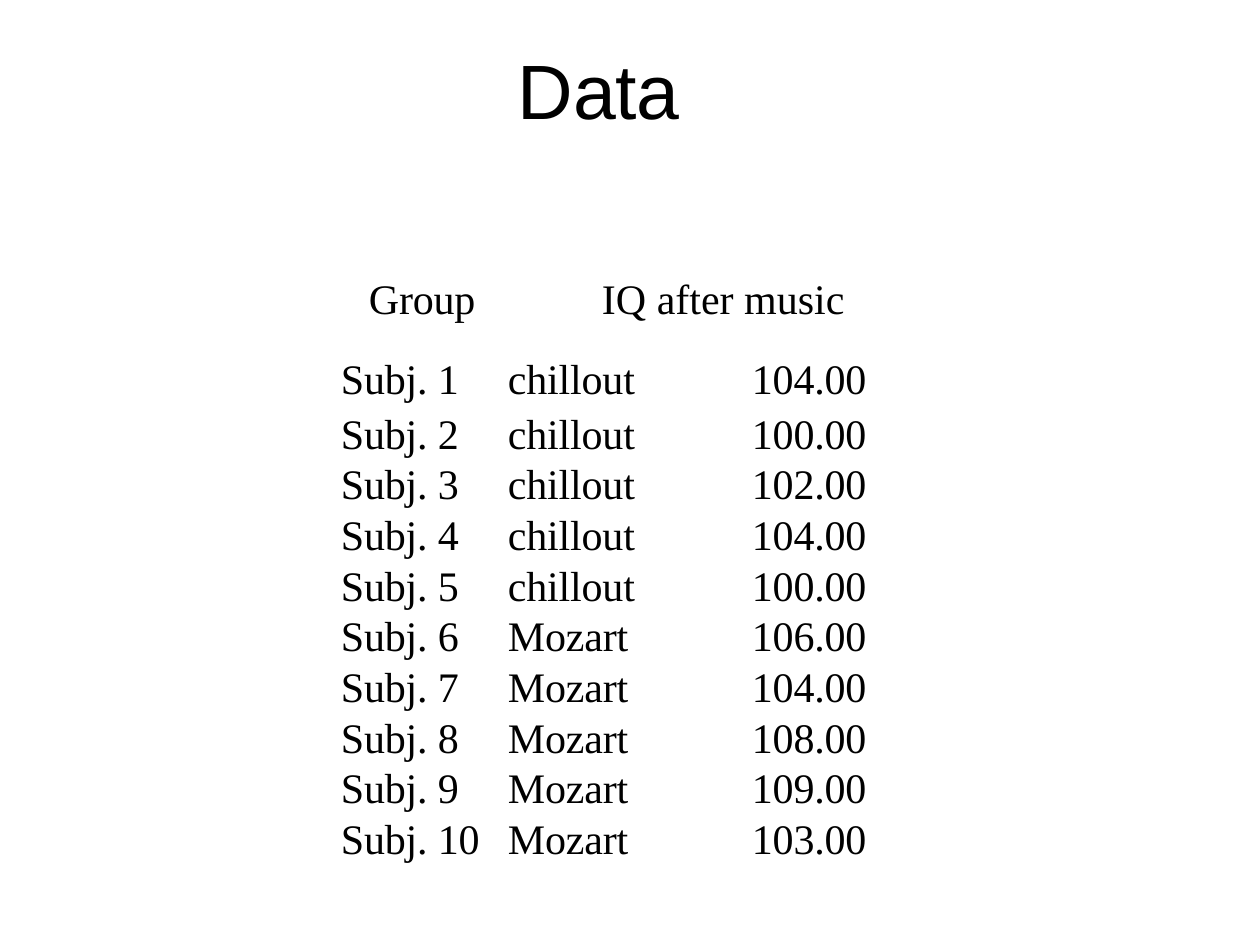
"""Build the slide listing IQ after music for ten subjects in two groups."""
from pptx import Presentation
from pptx.dml.color import RGBColor
from pptx.enum.text import MSO_ANCHOR, MSO_AUTO_SIZE, PP_ALIGN
from pptx.util import Pt

PX = 914400 // 126
BLACK = RGBColor(0, 0, 0)
SERIF = "Times New Roman"
TOP = MSO_ANCHOR.TOP
LEFT = PP_ALIGN.LEFT
NO_AUTOFIT = MSO_AUTO_SIZE.NONE


def write(frame, text, size=24, font=SERIF, indent=1, spacing=-10):
    frame.word_wrap = True
    para = frame.paragraphs[0]
    para.alignment = LEFT
    properties = para._p.get_or_add_pPr()
    properties.set("marL", str(indent * PX))
    properties.set("indent", "0")
    span = para.add_run()
    span.text = text
    span.font.size = Pt(size)
    span.font.name = font
    span.font.color.rgb = BLACK
    span.font._element.set("spc", str(spacing))


def clear_margins(holder):
    holder.margin_left = holder.margin_right = 0
    holder.margin_top = holder.margin_bottom = 0
    holder.vertical_anchor = TOP


deck = Presentation()
deck.slide_width = 1260 * PX
deck.slide_height = 945 * PX
page = deck.slides.add_slide(deck.slide_layouts[5])

title = page.shapes.title
title.left, title.top, title.width, title.height = 517 * PX, 43 * PX, 204 * PX, 93 * PX
clear_margins(title.text_frame)
title.text_frame.auto_size = NO_AUTOFIT
write(title.text_frame, "Data", size=44, font="Arial", spacing=-20)

for heading, left, width, spacing in (("Group", 368, 111, -10), ("IQ after music", 601, 246, 0)):
    box = page.shapes.add_textbox(left * PX, 273 * PX, width * PX, 50 * PX)
    clear_margins(box.text_frame)
    write(box.text_frame, heading, spacing=spacing)

scores = {
    "chillout": ["104.00", "100.00", "102.00", "104.00", "100.00"],
    "Mozart": ["106.00", "104.00", "108.00", "109.00", "103.00"],
}
results = [(group, score) for group, values in scores.items() for score in values]
column_widths = (168, 186, 202)
indents = (5, 4, 62)
row_edges = [357] + [412 + 403 * step // 8 for step in range(9)] + [870]

table = page.shapes.add_table(
    len(results), 3, 336 * PX, row_edges[0] * PX,
    sum(column_widths) * PX, (row_edges[-1] - row_edges[0]) * PX,
).table
table.first_row = False
table.horz_banding = False
for column, width in zip(table.columns, column_widths):
    column.width = width * PX
for index, (group, score) in enumerate(results):
    table.rows[index].height = (row_edges[index + 1] - row_edges[index]) * PX
    values = (f"Subj. {index + 1}", group, score)
    for cell, text, indent in zip(table.rows[index].cells, values, indents):
        clear_margins(cell)
        cell.fill.background()
        write(cell.text_frame, text, indent=indent)

deck.save("out.pptx")
